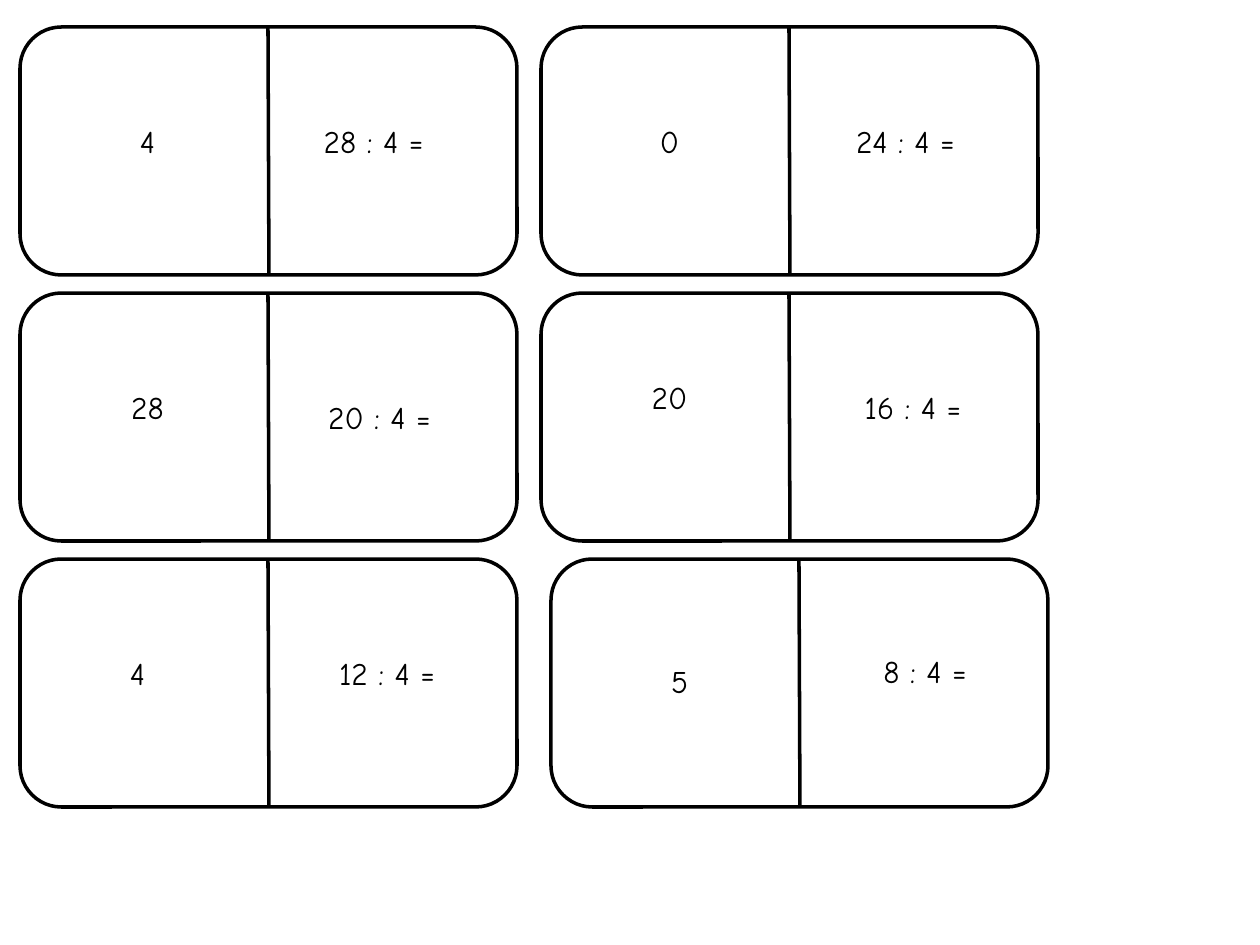
from lxml import etree
from pptx import Presentation
from pptx.dml.color import RGBColor
from pptx.enum.shapes import MSO_CONNECTOR, MSO_SHAPE
from pptx.enum.text import MSO_AUTO_SIZE, PP_ALIGN
from pptx.oxml.ns import qn
from pptx.util import Emu, Pt

ROUNDED = MSO_SHAPE.ROUNDED_RECTANGLE
STRAIGHT = MSO_CONNECTOR.STRAIGHT
GROW = MSO_AUTO_SIZE.SHAPE_TO_FIT_TEXT
CENTER = PP_ALIGN.CENTER

EMU_PER_PX = 914400 / 126
SLIDE_WIDTH, SLIDE_HEIGHT = 1260, 945
CARD_WIDTH, CARD_HEIGHT = 497, 248
FIRST_TOP, ROW_PITCH = 27, 266
TEXT_HEIGHT = 50
ANSWER_WIDTH = 79

# Each row holds cards of (left, answer, problem);
# answer is (text, left, top), problem is (text, left, top, width).
CARD_ROWS = [
    [(20, ("4", 108, 116), ("28 : 4 =", 305, 116, 137)),
     (541, ("0", 630, 116), ("24 : 4 =", 837, 116, 137))],
    [(20, ("28", 108, 382), ("20 : 4 =", 311, 392, 137)),
     (541, ("20", 630, 372), ("16 : 4 =", 847, 382, 132))],
    [(20, ("4", 98, 648), ("12 : 4 =", 321, 648, 132)),
     (551, ("5", 640, 656), ("8 : 4 =", 866, 646, 118))],
]


def px(length):
    return Emu(round(length * EMU_PER_PX))


def color(hex_string):
    return RGBColor.from_string(hex_string)


class DominoPage:
    font_name = "Comic Neue"
    font_size = Pt(18)
    ink = "000000"
    line_width = Pt(2)

    def __init__(self, page):
        self.page = page

    def style_line(self, line):
        line.color.rgb = color(self.ink)
        line.width = self.line_width

    def card(self, left, top):
        """Draw a rounded card split by a vertical line, as one group."""
        group = self.page.shapes.add_group_shape()
        outline = group.shapes.add_shape(
            ROUNDED, px(left), px(top), px(CARD_WIDTH), px(CARD_HEIGHT))
        outline.shadow.inherit = False
        outline.fill.background()
        self.style_line(outline.line)

        middle = left + CARD_WIDTH // 2
        divider = group.shapes.add_connector(
            STRAIGHT, px(middle), px(top), px(middle + 1), px(top + CARD_HEIGHT))
        self.style_line(divider.line)
        etree.SubElement(divider._element.spPr, qn("a:effectLst"))

    def text(self, words, left, top, width, wrap):
        box = self.page.shapes.add_textbox(
            px(left), px(top), px(width), px(TEXT_HEIGHT))
        frame = box.text_frame
        frame.word_wrap = wrap
        frame.auto_size = GROW
        para = frame.paragraphs[0]
        para.text = words
        para.alignment = CENTER
        para.font.name = self.font_name
        para.font.size = self.font_size
        para.font.color.rgb = color(self.ink)

    def answer(self, words, left, top):
        self.text(words, left, top, ANSWER_WIDTH, wrap=True)

    def problem(self, words, left, top, width):
        self.text(words, left, top, width, wrap=False)


def main():
    deck = Presentation()
    deck.slide_width, deck.slide_height = px(SLIDE_WIDTH), px(SLIDE_HEIGHT)
    blank = deck.slide_layouts[6]
    dominoes = DominoPage(deck.slides.add_slide(blank))
    for row, cards in enumerate(CARD_ROWS):
        for left, answer, problem in cards:
            dominoes.card(left, FIRST_TOP + row * ROW_PITCH)
            dominoes.answer(*answer)
            dominoes.problem(*problem)
    deck.save("out.pptx")


if __name__ == "__main__":
    main()
